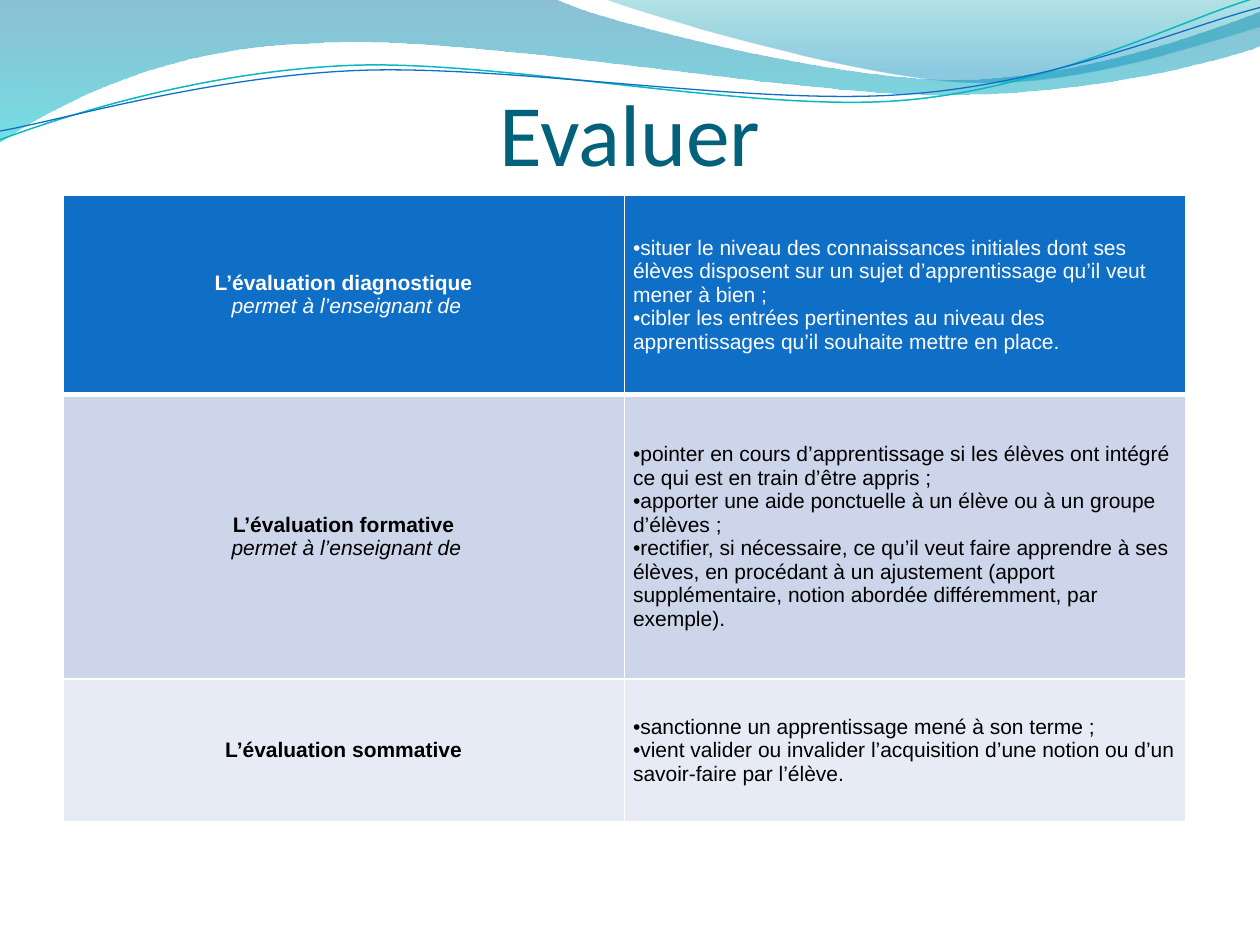
from pptx import Presentation
from pptx.dml.color import RGBColor
from pptx.enum.text import MSO_ANCHOR, PP_ALIGN
from pptx.oxml.ns import qn
from pptx.oxml.xmlchemy import OxmlElement
from pptx.util import Inches, Pt


def color(code):
    """Turn a hex string into a colour."""
    return RGBColor.from_string(code)


def child(parent, tag, **attributes):
    """Append an element with the given attributes."""
    element = OxmlElement(tag)
    for name, value in attributes.items():
        element.set(name, str(value))
    parent.append(element)
    return element


class SlideBuilder:
    """Hold the style and the current slide."""

    title_font, body_font = "Calibri", "Arial"
    title_color, white, black = "04617B", "FFFFFF", "000000"
    row_fills = ("0F6FC6", "CCD5EA", "E7EBF5")

    def __init__(self, page):
        self.page = page

    def outline(self, start, segments, close):
        """Draw lines (2 numbers) and Bézier curves (6 numbers) as one freeform."""
        builder = self.page.shapes.build_freeform(*map(Inches, start), scale=1.0)
        for segment in segments:
            pairs = zip(segment[::2], segment[1::2])
            builder.add_line_segments([(Inches(x), Inches(y)) for x, y in pairs], close=False)
        if close:
            builder.add_line_segments([], close=True)
        shape = builder.convert_to_shape()
        shape.shadow.inherit = False
        steps = iter(list(shape._element.iter(qn("a:lnTo"))))
        for segment in segments:
            first = next(steps)
            if len(segment) == 6:
                curve = OxmlElement("a:cubicBezTo")
                first.addprevious(curve)
                for step in (first, next(steps), next(steps)):
                    curve.append(step[0])
                    step.getparent().remove(step)
        return shape

    def wave(self, start, segments, stops):
        """Draw a wave with a translucent vertical gradient."""
        shape = self.outline(start, segments, True)
        shape.line.fill.background()
        shape.fill.gradient()
        shape.fill.gradient_angle = 270
        for stop, (position, code, opacity) in zip(shape.fill.gradient_stops, stops):
            stop.position = position
            stop.color.rgb = color(code)
        fills = shape._element.spPr.iter(qn("a:srgbClr"))
        for element, (position, code, opacity) in zip(fills, stops):
            child(element, "a:alpha", val=opacity * 1000)

    def strand(self, start, segments, code, width):
        """Draw a thin curved line."""
        shape = self.outline(start, segments, False)
        shape.fill.background()
        shape.line.color.rgb = color(code)
        shape.line.width = Pt(width)

    def title(self, text, left, top, width, height):
        """Add the centred title."""
        box = self.page.shapes.add_textbox(Inches(left), Inches(top),
                                           Inches(width), Inches(height))
        frame = box.text_frame
        frame.word_wrap = True
        frame.vertical_anchor = MSO_ANCHOR.BOTTOM
        frame.margin_left = frame.margin_right = frame.margin_bottom = 0
        para = frame.paragraphs[0]
        para.text = text
        para.alignment = PP_ALIGN.CENTER
        self.set_font(para.font, self.title_font, 50, self.title_color)

    def set_font(self, font, name, size, code):
        """Set the face, size and colour of a font."""
        font.name, font.size = name, Pt(size)
        font.color.rgb = color(code)

    def paragraphs(self, cell, texts, code):
        """Fill a cell with paragraphs and return them."""
        cell.text = "\n".join(texts)
        for para in cell.text_frame.paragraphs:
            self.set_font(para.font, self.body_font, 12, code)
        return cell.text_frame.paragraphs

    def bullet(self, para):
        """Put a bullet in the body font directly before a paragraph."""
        properties = para._p.get_or_add_pPr()
        properties.set("marL", "0")
        properties.set("indent", "0")
        for tag, name, value in (("a:buFont", "typeface", self.body_font),
                                 ("a:buChar", "char", "•")):
            element = OxmlElement(tag)
            element.set(name, value)
            properties.insert_element_before(element, "a:defRPr")

    def frame_cell(self, cell, fill, top, bottom):
        """Set the margins, borders and fill of a cell."""
        cell.vertical_anchor = MSO_ANCHOR.MIDDLE
        cell.margin_left = cell.margin_right = Inches(0.07)
        cell.margin_top = cell.margin_bottom = 0
        properties = cell._tc.get_or_add_tcPr()
        for side, width in zip("LRTB", (1, 1, top, bottom)):
            line = child(properties, f"a:ln{side}", w=Pt(width))
            child(child(line, "a:solidFill"), "a:srgbClr", val=self.white)
        cell.fill.solid()
        cell.fill.fore_color.rgb = color(fill)

    def table(self, rows, left, top, width, heights):
        """Add the table of evaluation kinds and their aims."""
        shape = self.page.shapes.add_table(len(rows), 2, Inches(left), Inches(top),
                                           Inches(width), Inches(sum(heights)))
        table = shape.table
        for index, (heading, aims) in enumerate(rows):
            table.rows[index].height = Inches(heights[index])
            code = self.black if index else self.white
            for cell in table.rows[index].cells:
                self.frame_cell(cell, self.row_fills[index],
                                3 if index == 1 else 1, 1 if index else 3)
            for line, para in enumerate(self.paragraphs(table.cell(index, 0), heading, code)):
                para.alignment = PP_ALIGN.CENTER
                para.font.bold = line == 0
                para.font.italic = line > 0
            for para in self.paragraphs(table.cell(index, 1), aims, code):
                para.font.bold = False
                self.bullet(para)


ALLOWS = " permet à l’enseignant de"
ROWS = [
    (["L’évaluation diagnostique", ALLOWS],
     ["situer le niveau des connaissances initiales dont ses élèves disposent sur un sujet "
      "d’apprentissage qu’il veut mener à bien ;",
      "cibler les entrées pertinentes au niveau des apprentissages qu’il souhaite mettre "
      "en place."]),
    (["L’évaluation formative", ALLOWS],
     ["pointer en cours d’apprentissage si les élèves ont intégré ce qui est en train "
      "d’être appris ;",
      "apporter une aide ponctuelle à un élève ou à un groupe d’élèves ;",
      "rectifier, si nécessaire, ce qu’il veut faire apprendre à ses élèves, en procédant à "
      "un ajustement (apport supplémentaire, notion abordée différemment, par exemple)."]),
    (["L’évaluation sommative"],
     ["sanctionne un apprentissage mené à son terme ;",
      "vient valider ou invalider l’acquisition d’une notion ou d’un savoir-faire par "
      "l’élève."]),
]


def main():
    """Build and save the slide."""
    deck = Presentation()
    deck.slide_width, deck.slide_height = Inches(10), Inches(7.5)
    slide = SlideBuilder(deck.slides.add_slide(deck.slide_layouts[6]))
    slide.wave((0, 0), [(4.4, -0.01), (4.76, 0.17, 6.64, 0.63, 7.58, 0.63),
                        (8.53, 0.63, 9.58, 0.26, 10, 0.09), (10.01, 0.36),
                        (9.83, 0.44, 8.7, 0.76, 7.46, 0.75),
                        (6.22, 0.75, 3.82, 0.28, 2.57, 0.34),
                        (1.29, 0.36, 0.46, 0.83, -0.01, 1.13)],
               [(0, "0074A1", 45), (1, "00C6CF", 55)])
    slide.wave((4.79, -0.01), [(5.09, 0.11, 6.82, 0.62, 7.69, 0.65),
                               (8.56, 0.69, 9.61, 0.32, 10, 0.21), (10, 0)],
               [(0, "00A1A9", 30), (0.8, "008BBF", 45)])
    slide.strand((0, 1.11), [(0.48, 0.93, 1.58, 0.57, 2.77, 0.52),
                             (3.95, 0.47, 5.93, 0.89, 7.13, 0.8),
                             (8.33, 0.71, 9.38, 0.15, 9.98, -0.02)], "0AB8BF", 0.85)
    slide.strand((0, 1.04), [(0.47, 0.96, 1.64, 0.61, 2.83, 0.56),
                             (4.03, 0.51, 5.97, 0.84, 7.17, 0.75),
                             (8.36, 0.67, 9.41, 0.21, 10, 0.06)], "0F6FC6", 0.75)
    slide.title("Evaluer", 0.5, 0.36, 9, 1.1)
    slide.table(ROWS, 0.5, 1.55, 8.91, [1.58, 2.26, 1.13])
    deck.save("out.pptx")


if __name__ == "__main__":
    main()
